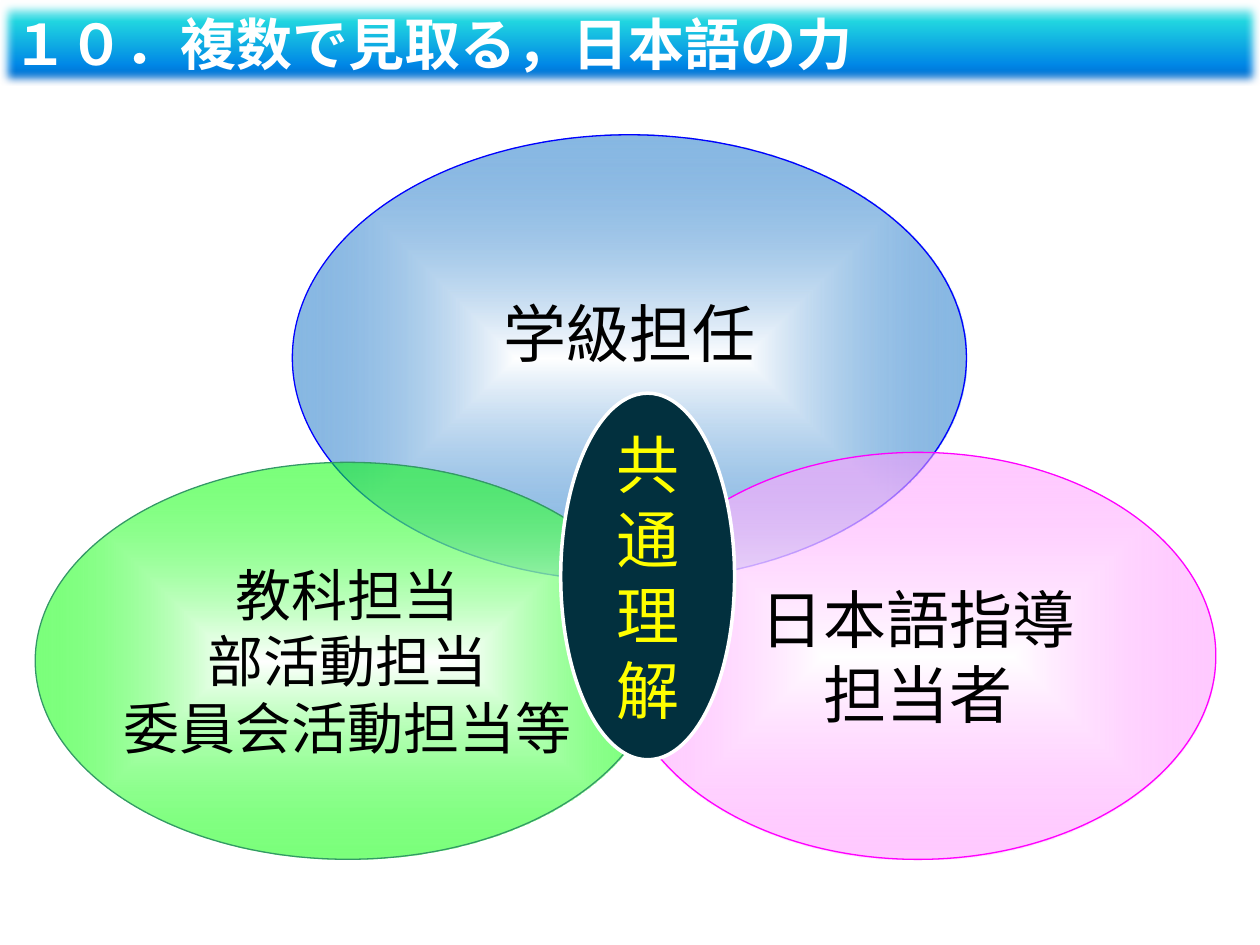
from dataclasses import dataclass

from lxml.etree import SubElement
from pptx import Presentation
from pptx.dml.color import RGBColor
from pptx.enum.shapes import MSO_SHAPE
from pptx.enum.text import MSO_ANCHOR, MSO_AUTO_SIZE, PP_ALIGN
from pptx.oxml.ns import qn
from pptx.util import Inches, Pt


@dataclass(frozen=True)
class Theme:
    latin: str = "Arial"
    japanese: str = "Noto Sans CJK JP"
    large: int = 36
    medium: int = 32
    line_pitch: float = 1.2
    white: str = "FFFFFF"
    black: str = "000000"
    yellow: str = "FFFF00"
    navy: str = "02303E"
    # Each role has a rim colour with its opacity in percent, and an outline
    homeroom: tuple = ("0F6FC6", 49, "0000FF")
    subject: tuple = ("00FF00", 51, "339966")
    language: tuple = ("FF99FF", 52, "FF00FF")
    banner: tuple = ((0, "FFFFFF", 100), (25, "21D6E0", 100),
                     (75, "0087E6", 100), (100, "005CBF", 100))


def write_text(frame, text, *, size, color, latin, japanese,
               align=PP_ALIGN.CENTER, bold=False, pitch=None, wrap=False):
    """Fill a text frame, one paragraph for each line of text."""
    frame.auto_size = MSO_AUTO_SIZE.NONE
    frame.word_wrap = wrap
    frame.vertical_anchor = MSO_ANCHOR.MIDDLE
    frame.text = text
    for paragraph in frame.paragraphs:
        paragraph.alignment = align
        if pitch:
            paragraph.line_spacing = Pt(round(size * pitch))
        for run in paragraph.runs:
            font = run.font
            font.size, font.bold, font.name = Pt(size), bold, latin
            font.color.rgb = RGBColor.from_string(color)
            east_asian = SubElement(font._element, qn("a:ea"))
            east_asian.set("typeface", japanese)


def set_gradient(shape, stops, radial=False):
    """Give a gradient of (position, colour, opacity) stops, in percent."""
    shape.fill.gradient()
    gradient = shape._element.spPr.find(qn("a:gradFill"))
    for child in list(gradient):
        gradient.remove(child)
    stop_list = SubElement(gradient, qn("a:gsLst"))
    for position, color, opacity in stops:
        stop = SubElement(stop_list, qn("a:gs"), pos=str(position * 1000))
        tint = SubElement(stop, qn("a:srgbClr"), val=color)
        if opacity < 100:
            SubElement(tint, qn("a:alpha"), val=str(opacity * 1000))
    if radial:
        center = SubElement(gradient, qn("a:path"), path="shape")
        SubElement(center, qn("a:fillToRect"),
                   **dict.fromkeys("ltrb", "50000"))
    else:
        SubElement(gradient, qn("a:lin"), ang="5400000", scaled="1")


class SlideBuilder:
    """Holds the theme and the current slide; boxes are in percent of it."""

    def __init__(self, deck, theme):
        self.theme = theme
        self.width, self.height = deck.slide_width, deck.slide_height
        self.slide = deck.slides.add_slide(deck.slide_layouts[5])

    def place(self, box):
        left, top, width, height = box
        return (round(self.width * left / 100), round(self.height * top / 100),
                round(self.width * width / 100),
                round(self.height * height / 100))

    def title(self, text, box):
        banner = self.slide.shapes.title
        banner.left, banner.top, banner.width, banner.height = self.place(box)
        set_gradient(banner, self.theme.banner)
        effects = SubElement(banner._element.spPr, qn("a:effectLst"))
        SubElement(effects, qn("a:softEdge"), rad=str(Pt(5)))
        write_text(banner.text_frame, text, size=self.theme.medium,
                   color=self.theme.white, latin=self.theme.japanese,
                   japanese=self.theme.japanese, align=PP_ALIGN.LEFT,
                   bold=True, wrap=True)

    def ellipse(self, text, box, *, outline, line_width, size, color):
        oval = self.slide.shapes.add_shape(MSO_SHAPE.OVAL, *self.place(box))
        oval.shadow.inherit = False
        oval.line.color.rgb = RGBColor.from_string(outline)
        oval.line.width = Pt(line_width)
        write_text(oval.text_frame, text, size=size, color=color,
                   latin=self.theme.latin, japanese=self.theme.japanese,
                   pitch=self.theme.line_pitch)
        return oval

    def role(self, text, box, colors, size, lift=0):
        """A translucent circle of staff; lift raises its text, in inches."""
        rim, opacity, outline = colors
        oval = self.ellipse(text, box, outline=outline, line_width=0.75,
                            size=size, color=self.theme.black)
        set_gradient(oval, ((0, self.theme.white, 100), (100, rim, opacity)),
                     radial=True)
        oval.text_frame.margin_bottom = Inches(0.05 + 2 * lift)

    def core(self, text, box):
        oval = self.ellipse(text, box, outline=self.theme.white, line_width=2,
                            size=self.theme.large, color=self.theme.yellow)
        oval.fill.solid()
        oval.fill.fore_color.rgb = RGBColor.from_string(self.theme.navy)


def main():
    deck = Presentation()
    deck.slide_width, deck.slide_height = Inches(10), Inches(7.5)
    theme = Theme()
    page = SlideBuilder(deck, theme)

    # Banner
    page.title("１０．複数で見取る，日本語の力", (0, 0, 100, 9.07))

    # Three overlapping roles
    page.role("学級担任", (23.2, 14.27, 53.5, 47.2), theme.homeroom,
              theme.large, lift=0.2)
    page.role("教科担当\n部活動担当\n委員会活動担当等", (2.8, 48.93, 49.6, 42),
              theme.subject, theme.medium)
    page.role("日本語指導\n担当者", (49.2, 47.87, 47.3, 43.07),
              theme.language, theme.large)

    # Shared understanding where the roles meet
    page.core("共\n通\n理\n解", (44.5, 41.6, 13.8, 38.8))

    deck.save("out.pptx")


if __name__ == "__main__":
    main()
